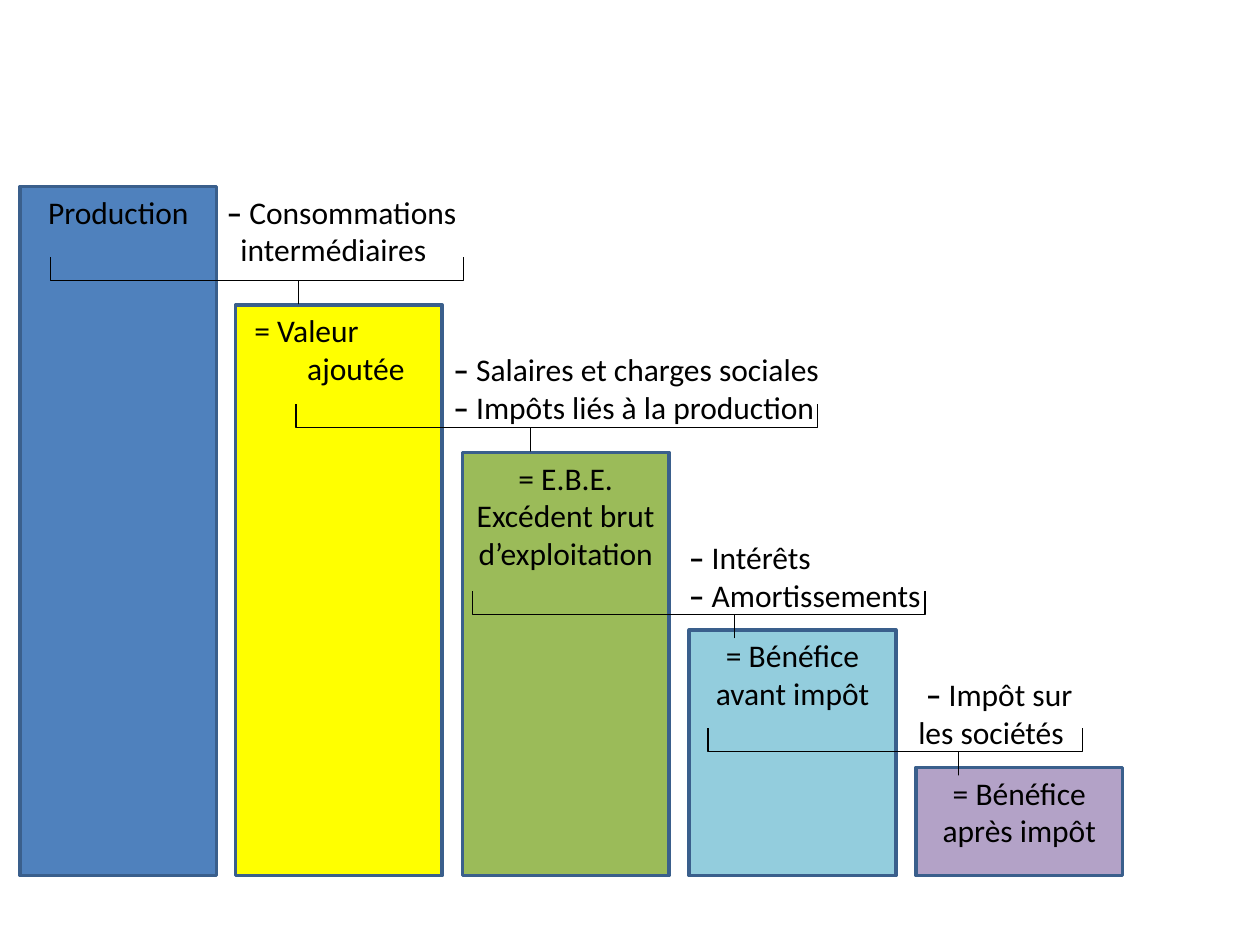
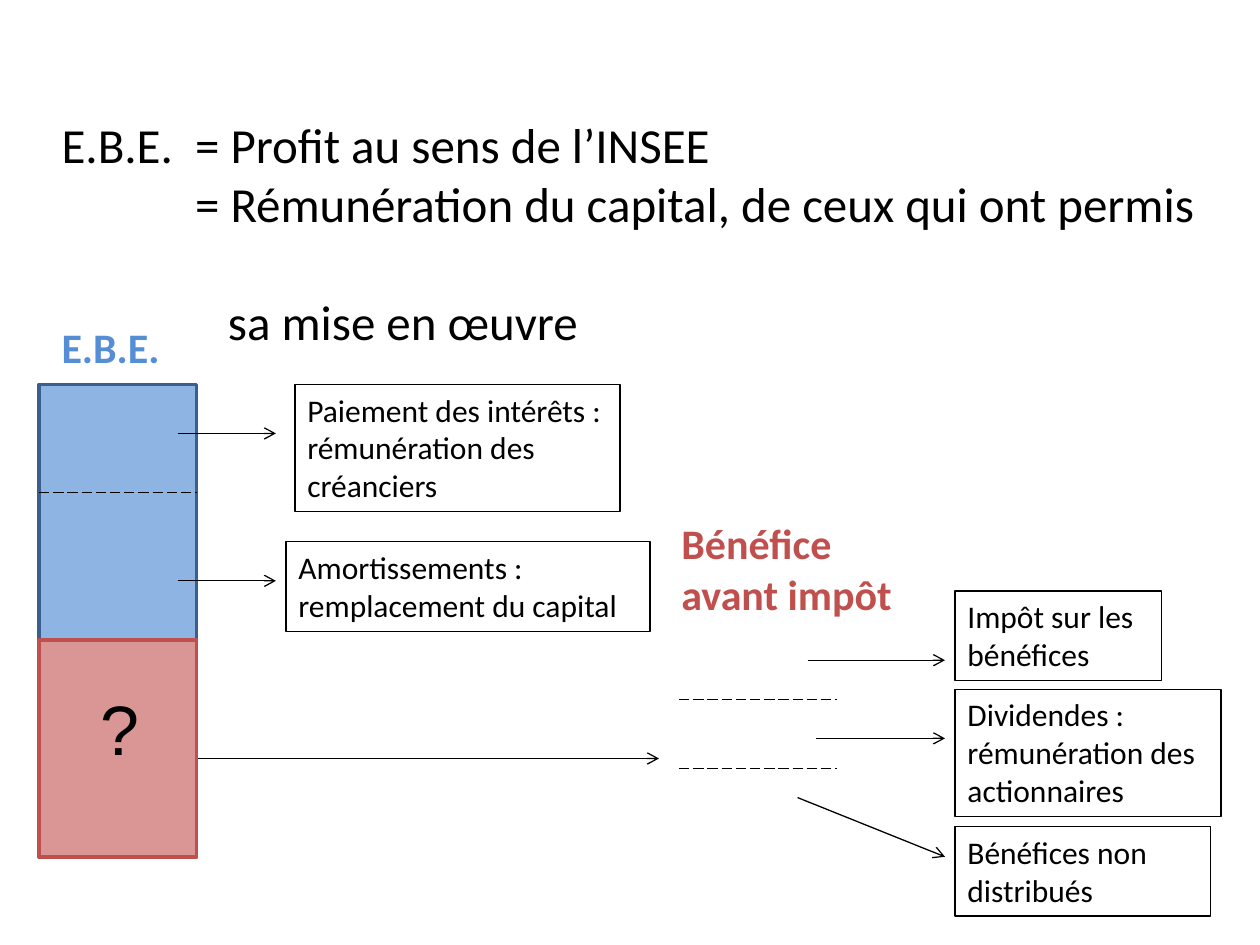
from pptx import Presentation
from pptx.dml.color import RGBColor
from pptx.enum.dml import MSO_LINE
from pptx.enum.shapes import MSO_CONNECTOR, MSO_SHAPE
from pptx.enum.text import MSO_ANCHOR, PP_ALIGN
from pptx.oxml.ns import qn
from pptx.util import Inches, Pt
from lxml.etree import SubElement

COLORS = {
    "black": "000000",
    "border": "3A5F8C",
    "production": "4F81BD",
    "added_value": "FFFF00",
    "ebe": "9BBB59",
    "before_tax": "93CDDD",
    "after_tax": "B3A2C7",
    "light_blue": "8EB4E3",
    "blue_text": "558ED5",
    "light_red": "D99694",
    "red": "C0504D",
}


class Deck:
    font = "Calibri"
    thin = 0.75
    thick = 2

    def __init__(self):
        self.prs = Presentation()
        self.prs.slide_width = Inches(10)
        self.prs.slide_height = Inches(7.5)
        self.s = None

    def new_slide(self):
        self.s = self.prs.slides.add_slide(self.prs.slide_layouts[6])

    def color(self, name):
        return RGBColor.from_string(COLORS[name])

    def outline(self, sp, color="black", width=thin):
        sp.line.color.rgb = self.color(color)
        sp.line.width = Pt(width)

    def fill_text(self, sp, lines, size=18, color="black", bold=False,
                  font=font, align=PP_ALIGN.LEFT, indents=()):
        tf = sp.text_frame
        tf.word_wrap = True
        tf.vertical_anchor = MSO_ANCHOR.TOP
        tf.text = "\n".join(lines)
        for p in tf.paragraphs:
            p.alignment = align
            for r in p.runs:
                r.font.name = font
                r.font.size = Pt(size)
                r.font.bold = bold
                r.font.color.rgb = self.color(color)
        for p, indent in zip(tf.paragraphs, indents):
            p._p.get_or_add_pPr().set("marL", str(Inches(indent)))
        return tf

    def shape(self, kind, x, y, w, h):
        sp = self.s.shapes.add_shape(kind, Inches(x), Inches(y), Inches(w), Inches(h))
        sp.shadow.inherit = False
        sp.fill.background()
        return sp

    def bar(self, x, y, w, h, fill, border="border"):
        sp = self.shape(MSO_SHAPE.RECTANGLE, x, y, w, h)
        sp.fill.solid()
        sp.fill.fore_color.rgb = self.color(fill)
        self.outline(sp, border, self.thick)
        return sp

    def box(self, x, y, w, h, text):
        sp = self.shape(MSO_SHAPE.RECTANGLE, x, y, w, h)
        self.outline(sp)
        self.fill_text(sp, [text])

    def text(self, x, y, w, h, lines, **style):
        sp = self.s.shapes.add_textbox(Inches(x), Inches(y), Inches(w), Inches(h))
        return self.fill_text(sp, lines, **style)

    def deduction(self, x, y, w, lines, indents):
        tf = self.text(x, y, w, 0.71, lines, indents=indents)
        for p in tf.paragraphs:
            if p.text.startswith("–"):
                words = p.text[1:]
                dash = p.runs[0]
                dash.text = "–"
                dash.font.bold = True
                r = p.add_run()
                r.text = words
                r.font.name = self.font
                r.font.size = dash.font.size
                r.font.color.rgb = self.color("black")

    def brace(self, x, y, w, point):
        depth = 0.37
        sp = self.shape(MSO_SHAPE.LEFT_BRACE, x + (w - depth) / 2,
                        y - (w - depth) / 2, depth, w)
        sp.rotation = 270
        sp.adjustments[0] = 0
        sp.adjustments[1] = point
        self.outline(sp)

    def line(self, x1, y1, x2, y2):
        cn = self.s.shapes.add_connector(
            MSO_CONNECTOR.STRAIGHT, Inches(x1), Inches(y1), Inches(x2), Inches(y2))
        self.outline(cn)
        SubElement(cn._element.spPr, qn("a:effectLst"))
        return cn

    def dashed(self, x, y, w):
        self.line(x, y, x + w, y).line.dash_style = MSO_LINE.LONG_DASH

    def arrow(self, x1, y1, x2, y2):
        ln = self.line(x1, y1, x2, y2)._element.spPr.find(qn("a:ln"))
        SubElement(ln, qn("a:tailEnd")).set("type", "arrow")


def income_steps(deck):
    deck.new_slide()
    bottom, pitch, width = 6.95, 1.8, 1.64
    center, left = PP_ALIGN.CENTER, PP_ALIGN.LEFT
    steps = [
        (1.48, "production", ["Production"], center, ()),
        (2.42, "added_value", ["= Valeur", "ajoutée"], left, (0.05, 0.47)),
        (3.59, "ebe", ["= E.B.E.", "Excédent brut d’exploitation"], center, ()),
        (5, "before_tax", ["= Bénéfice avant impôt"], center, ()),
        (6.09, "after_tax", ["= Bénéfice après impôt"], center, ()),
    ]
    for i, (top, fill, lines, align, indents) in enumerate(steps):
        x, w = (1.87 + pitch * (i - 1), width) if i else (0.16, 1.56)
        sp = deck.bar(x, top, w, bottom - top, fill)
        deck.fill_text(sp, lines, align=align, indents=indents)

    deductions = [
        (1.64, 1.48, 3.67, ["– Consommations", "intermédiaires"], (0.06, 0.17)),
        (3.44, 2.73, 3.67, ["– Salaires et charges sociales",
                            "– Impôts liés à la production"], (0.06, 0.06)),
        (5.31, 4.22, 2.19, ["– Intérêts", "– Amortissements"], (0.06, 0.06)),
        (7.19, 5.31, 1.8, ["– Impôt sur", "les sociétés"], (0.06, 0)),
    ]
    for deduction in deductions:
        deck.deduction(*deduction)

    for brace in [(0.4, 2.04, 3.28, 0.6), (2.35, 3.21, 4.14, 0.45),
                  (3.75, 4.69, 3.59, 0.58), (5.62, 5.78, 2.97, 0.67)]:
        deck.brace(*brace)


def ebe_sharing(deck):
    deck.new_slide()
    tf = deck.text(0.39, 0.86, 9.22, 1.51, [
        "E.B.E.\t= Profit au sens de l’INSEE",
        "= Rémunération du capital, de ceux qui ont permis",
        "sa mise en œuvre",
    ], size=28, indents=(1.06, 1.06, 1.32))
    tf.paragraphs[0]._p.get_or_add_pPr().set("indent", str(-Inches(1.06)))
    tf.paragraphs[2].space_before = Pt(34)

    x, w, split = 0.31, 1.25, 5.08
    deck.bar(x, 3.05, w, 3.75, "light_blue")
    deck.text(0.39, 2.5, 1.17, 0.5, ["E.B.E."], size=24, color="blue_text", bold=True)
    deck.arrow(1.25, 6.02, 5.23, 6.02)
    deck.bar(x, split, w, 1.72, "light_red", "red")
    deck.text(0.7, 5.39, 0.63, 0.77, ["?"], size=40, font="Arial")
    deck.text(5.31, 4.06, 2.03, 0.91, ["Bénéfice avant impôt"],
              size=24, color="red", bold=True)

    for left, top in [(x, 3.91), (5.39, 5.55), (5.39, 6.1)]:
        deck.dashed(left, top, w)

    for arrow in [(1.41, 3.44, 2.19, 3.44), (1.41, 4.61, 2.19, 4.61),
                  (6.41, 5.24, 7.5, 5.24), (6.48, 5.86, 7.5, 5.86),
                  (6.33, 6.33, 7.5, 6.8)]:
        deck.arrow(*arrow)

    for box in [
        (2.34, 3.05, 2.58, 1.01, "Paiement des intérêts : rémunération des créanciers"),
        (2.27, 4.3, 2.89, 0.71, "Amortissements : remplacement du capital"),
        (7.58, 4.69, 1.64, 0.71, "Impôt sur les bénéfices"),
        (7.58, 5.47, 2.11, 1.01, "Dividendes : rémunération des actionnaires"),
        (7.58, 6.56, 2.03, 0.71, "Bénéfices non distribués"),
    ]:
        deck.box(*box)


def main():
    deck = Deck()
    income_steps(deck)
    ebe_sharing(deck)
    deck.prs.save("out.pptx")


if __name__ == "__main__":
    main()
